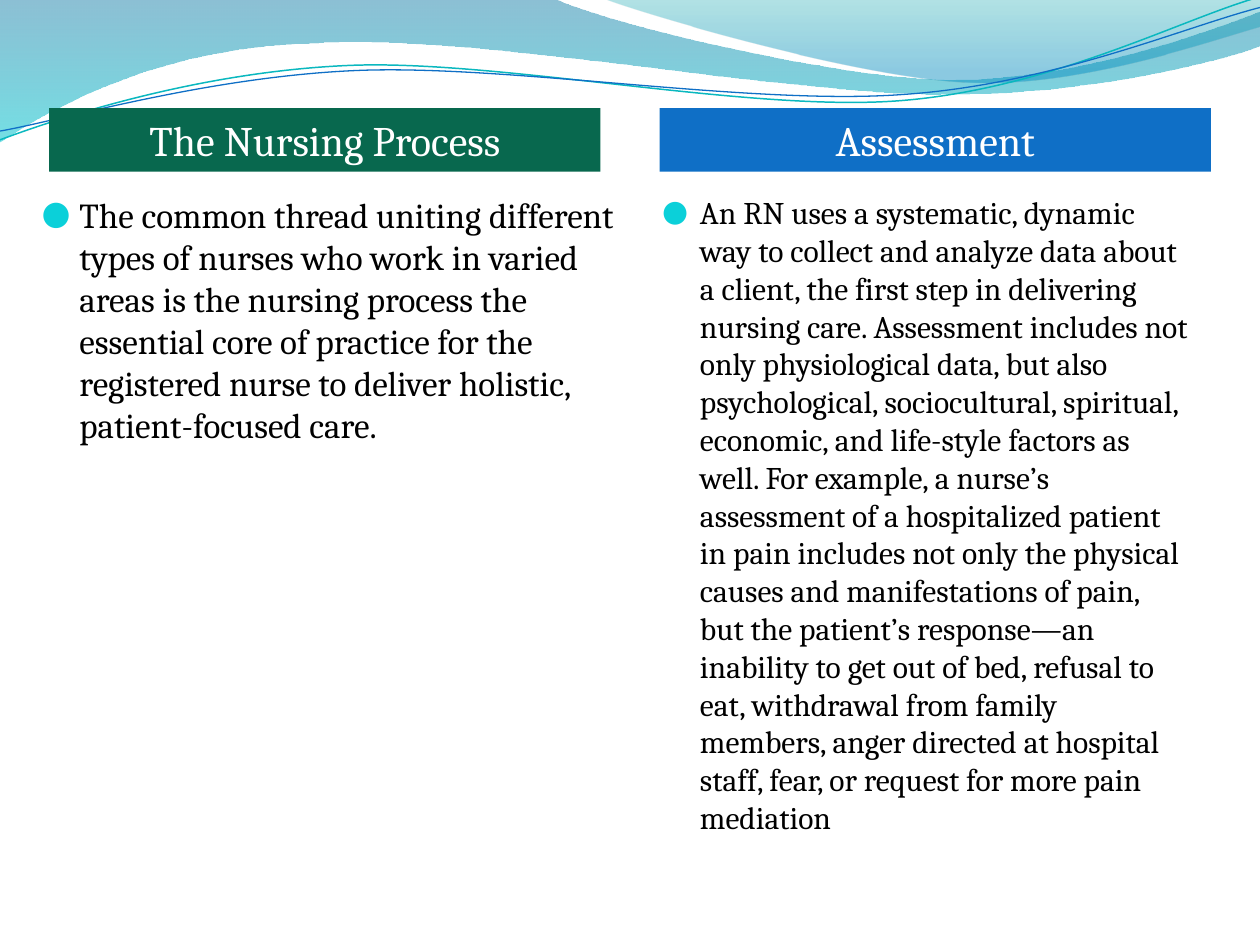
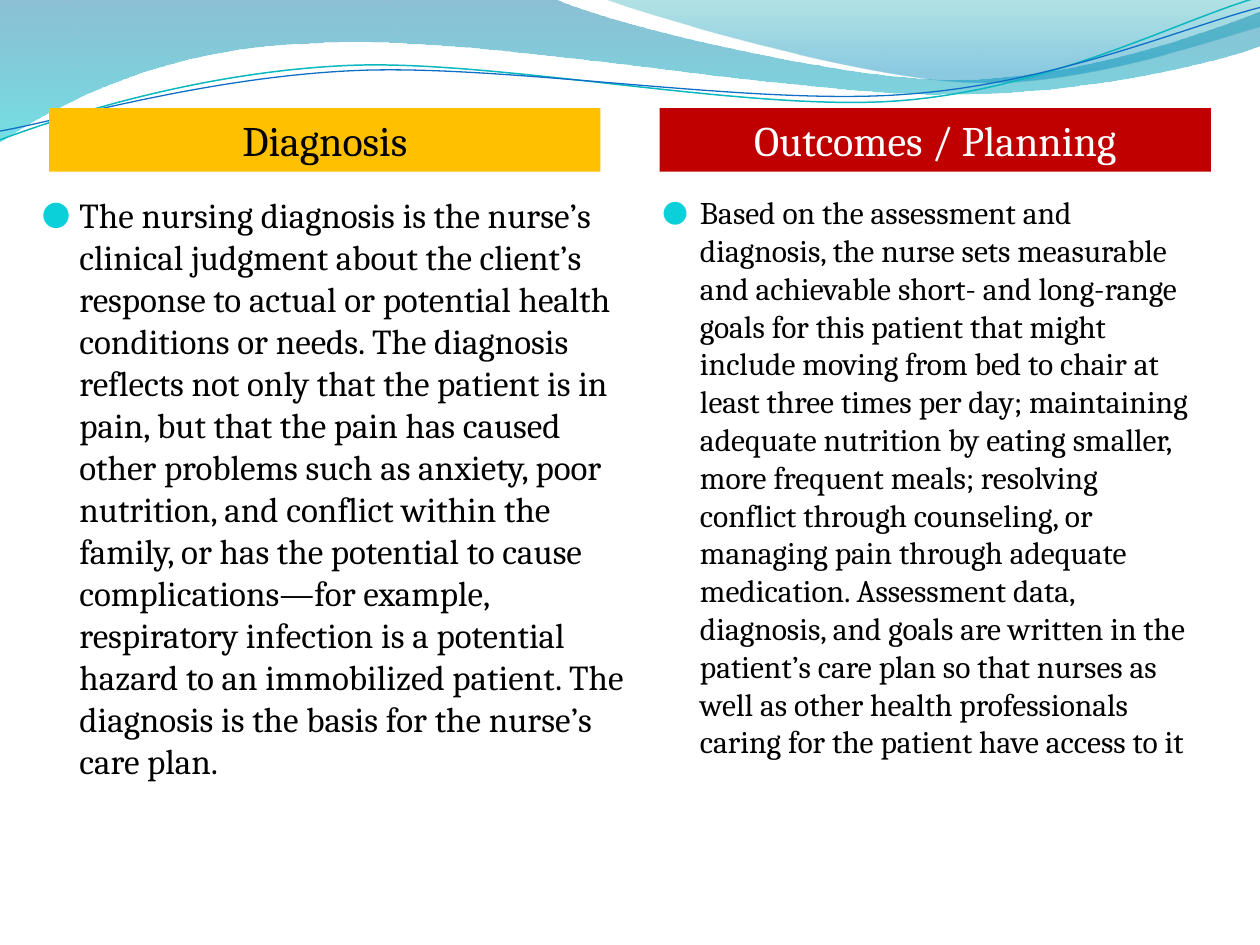
from dataclasses import dataclass
from math import cos, radians, sin
from pptx import Presentation
from pptx.dml.color import RGBColor
from pptx.enum.shapes import MSO_SHAPE as Preset
from pptx.enum.text import MSO_ANCHOR as Anchor, MSO_AUTO_SIZE as AutoSize, PP_ALIGN as Align
from pptx.oxml.ns import qn
from pptx.oxml.xmlchemy import OxmlElement as new_element
from pptx.util import Pt


@dataclass(frozen=True)
class Theme:
    font: str = "Cambria"
    white: str = "FFFFFF"
    black: str = "000000"
    green: str = "08684E"
    blue: str = "0F6FC6"
    amber: str = "FFC000"
    red: str = "C00000"
    teal: str = "0AB8BF"
    bullet: str = "0BD0D9"
    wave_stops: tuple = ((0, "0074A1", 45), (1, "00C6CF", 55))
    crest_stops: tuple = ((0, "00A1A9", 30), (0.8, "008BBF", 45))
    header_size: int = 24


@dataclass(frozen=True)
class Column:
    left: float
    body_shift: float
    body_width: float
    body_size: int


THEME = Theme()
PAGE_WIDTH, PAGE_HEIGHT = 720, 540
COLUMN_WIDTH, HEADER_TOP, HEADER_HEIGHT = 315, 61.8, 36.4
BODY_TOP, BODY_HEIGHT = 106.8, 315.4
BULLET_INDENT = 21.6
STRAND_TILT = 2.7
COLUMNS = (
    Column(28.1, -11.4, 354.2, 20),
    Column(376.9, -5.6, 315.4, 18),
)

WAVE = [
    [(0, 0)],
    [(316.8, -0.7)],
    [(342.7, 12.2), (478.1, 45.4), (545.8, 45.4)],
    [(614.2, 45.4), (689.8, 18.7), (720, 6.5)],
    [(720.7, 25.9)],
    [(707.8, 31.7), (626.4, 54.7), (537.1, 54)],
    [(447.8, 54), (275, 20.2), (185, 24.5)],
    [(92.9, 25.9), (33.1, 59.8), (-0.7, 81.4)],
    [(0, 0)],
]
CREST = [
    [(344.9, -0.7)],
    [(366.5, 7.9), (491, 44.6), (553.7, 46.8)],
    [(616.3, 49.7), (691.9, 23), (720, 15.1)],
    [(720, 0)],
    [(344.9, -0.7)],
]
TEAL_STRAND = [
    [(0, 79.9)],
    [(34.6, 67), (113.8, 41), (199.4, 37.4)],
    [(284.4, 33.8), (427, 64.1), (513.4, 57.6)],
    [(599.8, 51.1), (675.4, 10.8), (718.6, -1.4)],
]
BLUE_STRAND = [
    [(0, 74.9)],
    [(33.8, 69.1), (118.1, 43.9), (203.8, 40.3)],
    [(290.2, 36.7), (429.8, 60.5), (516.2, 54)],
    [(601.9, 48.2), (677.5, 15.1), (720, 4.3)],
]

SLIDES = [
    [
        ("The Nursing Process", THEME.green, THEME.white,
         "The common thread uniting different types of nurses who work in varied "
         "areas is the nursing process the essential core of practice for the "
         "registered nurse to deliver holistic, patient-focused care."),
        ("Assessment", THEME.blue, THEME.white,
         "An RN uses a systematic, dynamic way to collect and analyze data about a "
         "client, the first step in delivering nursing care. Assessment includes not "
         "only physiological data, but also psychological, sociocultural, spiritual, "
         "economic, and life-style factors as well. For example, a nurse’s assessment "
         "of a hospitalized patient in pain includes not only the physical causes and "
         "manifestations of pain, but the patient’s response—an inability to get out "
         "of bed, refusal to eat, withdrawal from family members, anger directed at "
         "hospital staff, fear, or request for more pain mediation"),
    ],
    [
        ("Diagnosis", THEME.amber, THEME.black,
         "The nursing diagnosis is the nurse’s clinical judgment about the client’s "
         "response to actual or potential health conditions or needs. The diagnosis "
         "reflects not only that the patient is in pain, but that the pain has caused "
         "other problems such as anxiety, poor nutrition, and conflict within the "
         "family, or has the potential to cause complications—for example, respiratory "
         "infection is a potential hazard to an immobilized patient. The diagnosis is "
         "the basis for the nurse’s care plan."),
        ("Outcomes / Planning", THEME.red, THEME.white,
         "Based on the assessment and diagnosis, the nurse sets measurable and "
         "achievable short- and long-range goals for this patient that might include "
         "moving from bed to chair at least three times per day; maintaining adequate "
         "nutrition by eating smaller, more frequent meals; resolving conflict through "
         "counseling, or managing pain through adequate medication. Assessment data, "
         "diagnosis, and goals are written in the patient’s care plan so that nurses "
         "as well as other health professionals caring for the patient have access to it"),
    ],
]


def color(code):
    return RGBColor.from_string(code)


def add_outline(shapes, segments, closed):
    (start_x, start_y), *rest = [(Pt(x), Pt(y)) for segment in segments for x, y in segment]
    builder = shapes.build_freeform(start_x, start_y)
    builder.add_line_segments(rest, close=closed)
    shape = builder.convert_to_shape()
    shape.shadow.inherit = False
    lines = iter(list(shape._element.iter(qn("a:lnTo"))))
    for segment in segments[1:]:
        parts = [next(lines) for _ in segment]
        if len(parts) == 3:
            curve = new_element("a:cubicBezTo")
            parts[0].addprevious(curve)
            for part in parts:
                curve.append(part[0])
                part.getparent().remove(part)
    return shape


def add_wave(page, segments, stops):
    wave = add_outline(page.shapes, segments, True)
    wave.line.fill.background()
    wave.fill.gradient()
    wave.fill.gradient_angle = 270
    for stop, (position, code, _) in zip(wave.fill.gradient_stops, stops):
        stop.position = position
        stop.color.rgb = color(code)
    for tint, (_, _, opacity) in zip(wave._element.spPr.iter(qn("a:srgbClr")), stops):
        alpha = new_element("a:alpha")
        alpha.set("val", str(opacity * 1000))
        tint.append(alpha)


def level(segments, center_x, center_y):
    c, s = cos(radians(STRAND_TILT)), sin(radians(STRAND_TILT))
    return [
        [(center_x + (x - center_x) * c - (y - center_y) * s,
          center_y + (x - center_x) * s + (y - center_y) * c) for x, y in segment]
        for segment in segments
    ]


def add_strand(group, segments, center, code, width):
    strand = add_outline(group.shapes, level(segments, *center), False)
    strand.rotation = 360 - STRAND_TILT
    strand.fill.background()
    strand.line.color.rgb = color(code)
    strand.line.width = Pt(width)


def add_backdrop(page):
    add_wave(page, WAVE, THEME.wave_stops)
    add_wave(page, CREST, THEME.crest_stops)
    strands = page.shapes.add_group_shape()
    add_strand(strands, TEAL_STRAND, (359.3, 41.4), THEME.teal, 0.85)
    add_strand(strands, BLUE_STRAND, (359.6, 42.5), THEME.blue, 0.75)


def write_text(box, text, size, code):
    frame = box.text_frame
    frame.word_wrap = True
    frame.vertical_anchor = Anchor.TOP
    frame.text = text
    para = frame.paragraphs[0]
    font = para.runs[0].font
    font.name, font.size = THEME.font, Pt(size)
    font.color.rgb = color(code)
    return para


def add_bullet(para):
    props = para._p.get_or_add_pPr()
    props.set("marL", str(Pt(BULLET_INDENT)))
    props.set("indent", str(-Pt(BULLET_INDENT)))
    bullet_color = new_element("a:buClr")
    tint = new_element("a:srgbClr")
    tint.set("val", THEME.bullet)
    bullet_color.append(tint)
    props.append(bullet_color)
    for tag, key, value in (
        ("a:buSzPct", "val", "95000"),
        ("a:buFont", "typeface", THEME.font),
        ("a:buChar", "char", "●"),
    ):
        part = new_element(tag)
        part.set(key, value)
        props.append(part)


def add_column(page, column, title, fill, title_color, body_text):
    header = page.shapes.add_shape(
        Preset.RECTANGLE, Pt(column.left), Pt(HEADER_TOP), Pt(COLUMN_WIDTH), Pt(HEADER_HEIGHT))
    header.shadow.inherit = False
    header.fill.solid()
    header.fill.fore_color.rgb = color(fill)
    header.line.fill.background()
    write_text(header, title, THEME.header_size, title_color).alignment = Align.CENTER
    header.text_frame.auto_size = AutoSize.SHAPE_TO_FIT_TEXT
    body = page.shapes.add_textbox(
        Pt(column.left + column.body_shift), Pt(BODY_TOP), Pt(column.body_width), Pt(BODY_HEIGHT))
    add_bullet(write_text(body, body_text, column.body_size, THEME.black))


def main():
    deck = Presentation()
    deck.slide_width, deck.slide_height = Pt(PAGE_WIDTH), Pt(PAGE_HEIGHT)
    for topics in SLIDES:
        page = deck.slides.add_slide(deck.slide_layouts[6])
        add_backdrop(page)
        for column, topic in zip(COLUMNS, topics):
            add_column(page, column, *topic)
    deck.save("out.pptx")


if __name__ == "__main__":
    main()
